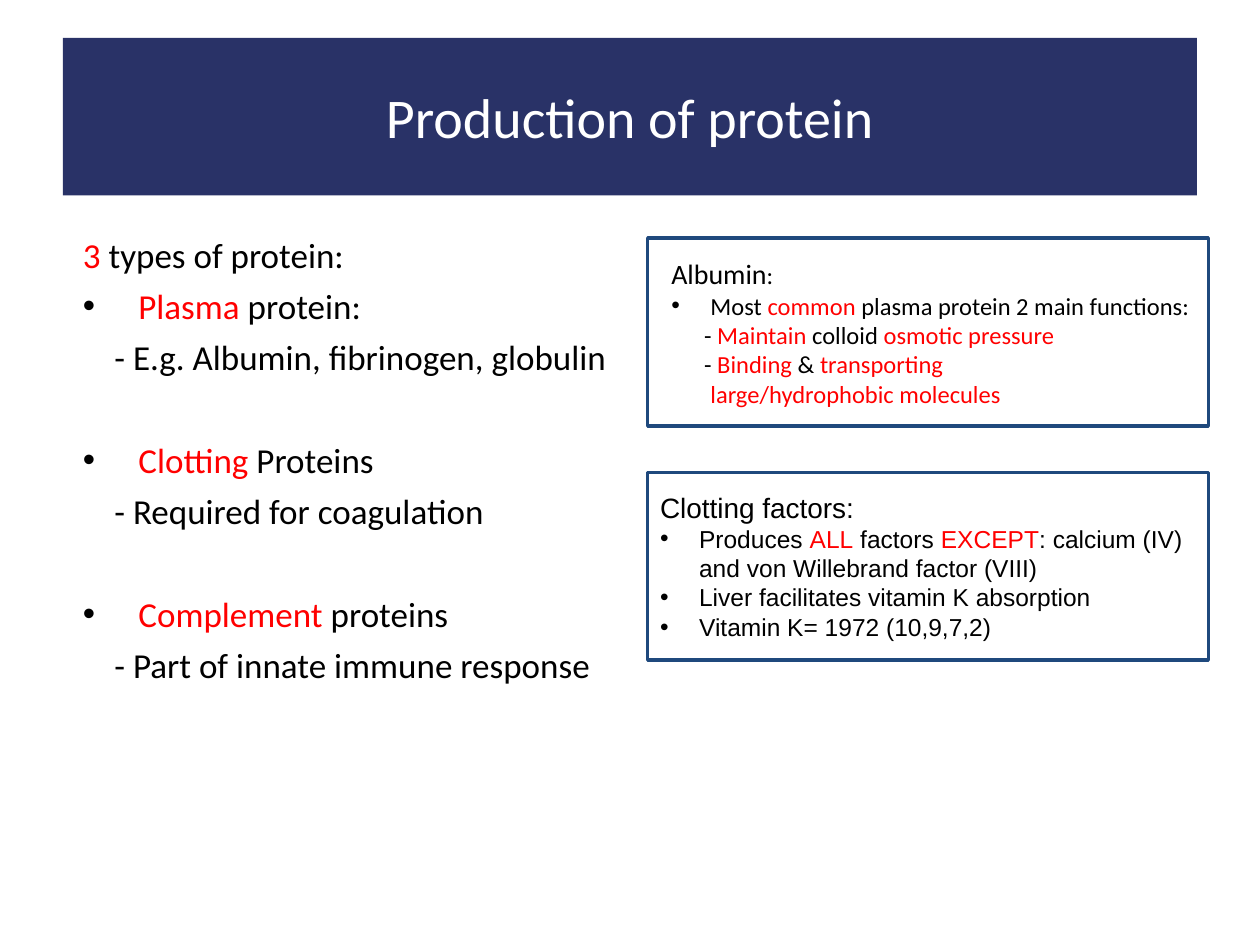
from dataclasses import dataclass

from lxml import etree
from pptx import Presentation
from pptx.dml.color import RGBColor
from pptx.enum import shapes, text
from pptx.oxml import ns
from pptx.util import Inches, Pt


@dataclass(frozen=True)
class Theme:
    navy: RGBColor = RGBColor.from_string("293267")
    border: RGBColor = RGBColor.from_string("1F497D")
    red: RGBColor = RGBColor.from_string("FF0000")
    black: RGBColor = RGBColor.from_string("000000")
    white: RGBColor = RGBColor.from_string("FFFFFF")
    title: int = 32
    body: int = 20
    heading: int = 16
    detail: int = 14


theme = Theme()


def write(frame, marked, size, font="Calibri", color=theme.black, left=0,
          hanging=0, before=0, align=text.PP_ALIGN.LEFT, tail=""):
    first = frame.paragraphs[0]
    line = frame.add_paragraph() if first.runs else first
    line.alignment = align
    if line is not first:
        line.space_before = Pt(before)
    props = line._p.get_or_add_pPr()
    props.set("marL", str(Inches(left)))
    props.set("indent", str(-Inches(hanging)))
    if hanging:
        tint = etree.SubElement(props, ns.qn("a:buClr"))
        etree.SubElement(tint, ns.qn("a:srgbClr"), val=str(theme.black))
        etree.SubElement(props, ns.qn("a:buFont"), typeface="Arial")
        etree.SubElement(props, ns.qn("a:buChar"), char="•")
    pieces = [(words, size, theme.red if i % 2 else color)
              for i, words in enumerate(marked.split("*"))]
    pieces.append((tail, theme.detail, color))
    for words, points, ink in pieces:
        if words:
            run = line.add_run()
            run.text = words
            run.font.name = font
            run.font.size = Pt(points)
            run.font.color.rgb = ink


def text_area(left, top, width, height):
    frame = slide.shapes.add_textbox(
        Inches(left), Inches(top), Inches(width), Inches(height)).text_frame
    frame.word_wrap = True
    return frame


prs = Presentation()
prs.slide_width, prs.slide_height = Inches(10), Inches(7.5)
slide = prs.slides.add_slide(prs.slide_layouts[6])

for top in (3.75, 1.89):
    panel = slide.shapes.add_shape(shapes.MSO_SHAPE.RECTANGLE, Inches(5.14),
                                   Inches(top), Inches(4.45), Inches(1.49))
    panel.shadow.inherit = False
    panel.fill.solid()
    panel.fill.fore_color.rgb = theme.white
    panel.line.color.rgb = theme.border
    panel.line.width = Pt(2)

protein_types = text_area(0.5, 1.75, 9, 4.95)
protein_types.margin_top = protein_types.margin_bottom = Inches(0.1)
write(protein_types, "*3* types of protein:", theme.body, left=0.06)
for kind, detail, before in (
    ("*Plasma* protein:", "- E.g. Albumin, fibrinogen, globulin", 5.2),
    ("*Clotting* Proteins", "- Required for coagulation", 34.9),
    ("*Complement* proteins", "- Part of innate immune response", 34.9),
):
    write(protein_types, kind, theme.body, left=0.5, hanging=0.44, before=before)
    write(protein_types, detail, theme.body, left=0.31, before=5.2)

banner = slide.shapes.add_shape(shapes.MSO_SHAPE.RECTANGLE, Inches(0.5),
                                Inches(0.3), Inches(9), Inches(1.25))
banner.shadow.inherit = False
banner.fill.solid()
banner.fill.fore_color.rgb = theme.navy
banner.line.fill.background()
banner.text_frame.vertical_anchor = text.MSO_ANCHOR.MIDDLE
write(banner.text_frame, "Production of protein", theme.title,
      color=theme.white, align=text.PP_ALIGN.CENTER)

albumin = text_area(5.23, 1.99, 4.62, 1.31)
write(albumin, "Albumin", theme.heading, tail=":")
for marked, left, hanging in (
    ("Most *common* plasma protein 2 main functions:", 0.31, 0.31),
    ("- *Maintain* colloid *osmotic pressure*", 0.26, 0),
    ("- *Binding* & *transporting*", 0.26, 0),
    ("*large/hydrophobic molecules*", 0.31, 0),
):
    write(albumin, marked, theme.detail, left=left, hanging=hanging)

clotting = text_area(5.14, 3.84, 4.45, 1.31)
write(clotting, "Clotting factors:", theme.heading, font="Arial")
for marked in (
    "Produces *ALL* factors *EXCEPT*: calcium (IV) and von Willebrand factor (VIII)",
    "Liver facilitates vitamin K absorption",
    "Vitamin K= 1972 (10,9,7,2)",
):
    write(clotting, marked, theme.detail, font="Arial", left=0.31, hanging=0.31)

prs.save("out.pptx")
